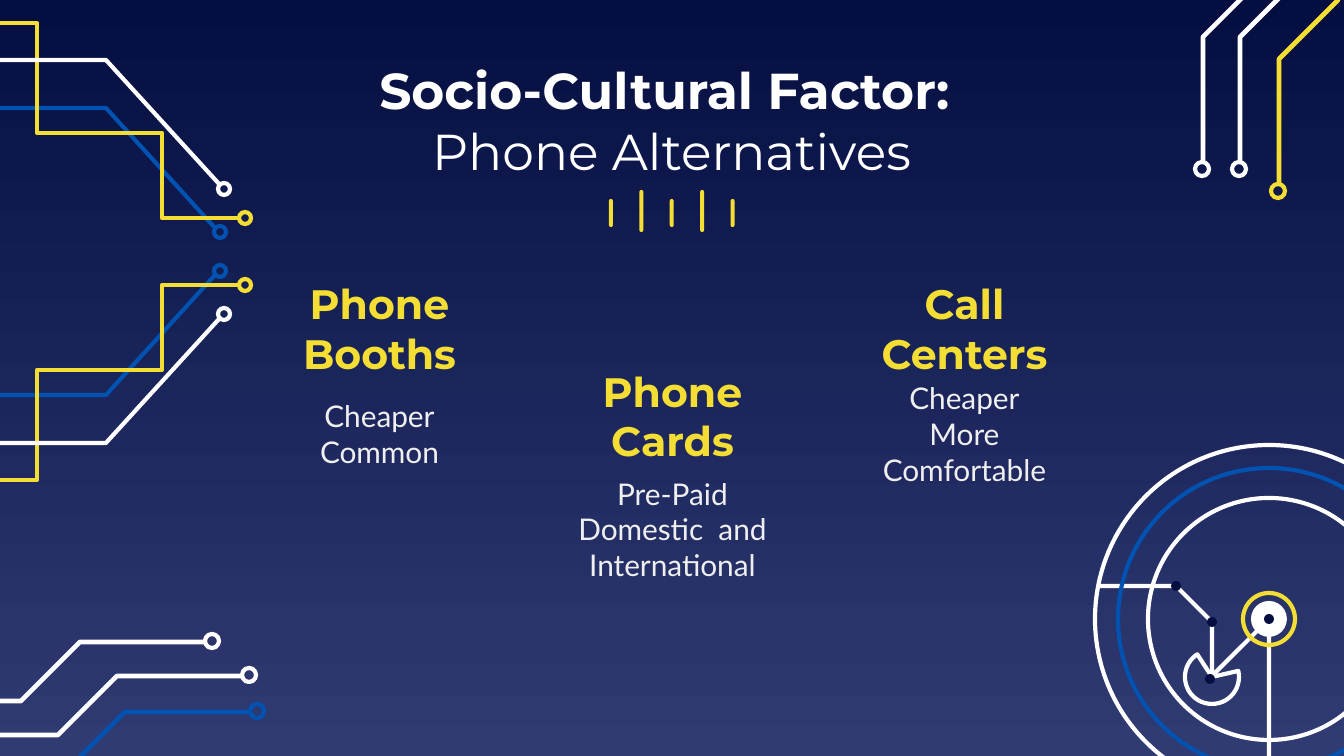
from pptx import Presentation
from pptx import util as u
from pptx.dml import color
from pptx.enum import shapes, text

SCALE = 914400 / 134.4
WHITE, YELLOW, BLUE, NAVY, PALE = "FFFFFF", "F5DE34", "0152B1", "040E41", "EFEFEF"
MIRROR_SUM = 503
BEND = [(-289, 60), (-191, 60), (-132, 1), (-7, 1)]


def px(value):
    return u.Emu(round(value * SCALE))


def rgb(value):
    return color.RGBColor.from_string(value)


def paint(shape, fill=None, line=None, width=2.25):
    shape.shadow.inherit = False
    if fill:
        shape.fill.solid()
        shape.fill.fore_color.rgb = rgb(fill)
    else:
        shape.fill.background()
    if line:
        shape.line.color.rgb = rgb(line)
        shape.line.width = u.Pt(width)
    else:
        shape.line.fill.background()


def add_wire(page, points, hue, width=2.25):
    builder = page.shapes.build_freeform(*points[0], scale=SCALE)
    builder.add_line_segments(points[1:], close=False)
    paint(builder.convert_to_shape(), line=hue, width=width)


def add_preset(page, kind, left, top, width, height, fill=None, line=None):
    shape = page.shapes.add_shape(kind, px(left), px(top), px(width), px(height))
    paint(shape, fill, line)
    return shape


def add_circle(page, center, radius, fill=None, line=None):
    x, y = center
    side = 2 * radius
    add_preset(page, shapes.MSO_SHAPE.OVAL, x - radius, y - radius, side, side, fill, line)


def add_bent_lead(page, ring, hue, upright=False):
    steps = [(dy, dx) for dx, dy in BEND] if upright else BEND
    add_wire(page, [(ring[0] + dx, ring[1] + dy) for dx, dy in steps], hue, 2.5)
    add_circle(page, ring, 7, line=hue)


def add_left_leads(page):
    leads = [
        (BLUE, (220, 232), [(215, 228), (106, 108), (-67, 108)]),
        (YELLOW, (245, 218), [(239, 218), (162, 218), (162, 133), (37, 133), (37, 23), (-67, 23)]),
        (WHITE, (224, 189), [(220, 185), (106, 60), (-67, 60)]),
    ]
    for mirrored in (False, True):
        for hue, ring, points in leads:
            if mirrored:
                ring, *points = [(x, MIRROR_SUM - y) for x, y in [ring] + points]
            add_wire(page, points, hue)
            add_circle(page, ring, 6, line=hue)


def add_dial(page):
    center = (1269, 619)
    corners = [(1097, 586), (1176, 586), (1212, 622), (1212, 676), center, (1269, 825)]
    add_wire(page, corners, WHITE)
    wedge = add_preset(page, shapes.MSO_SHAPE.PIE, 1185, 650, 54, 54, line=WHITE)
    for index, degrees in enumerate((347, 237)):
        wedge.adjustments[index] = degrees * 0.6
    for radius, hue in ((174, WHITE), (121, WHITE), (151, BLUE)):
        add_circle(page, center, radius, line=hue)
    add_circle(page, center, 18, fill=WHITE)
    add_circle(page, center, 26, line=YELLOW)
    for dot in (center, (1176, 586), (1212, 622), (1210, 679)):
        add_circle(page, dot, 5, fill=NAVY)


def add_ticks(page):
    for index in range(5):
        top, height = (190, 42) if index % 2 else (199, 28)
        left = 609 + index * 30.4
        tick = add_preset(page, shapes.MSO_SHAPE.ROUNDED_RECTANGLE, left, top, 4, height, YELLOW)
        tick.adjustments[0] = 0.5


def write(box, lines, size, face, hue):
    frame = box.text_frame
    frame.word_wrap = True
    frame.auto_size = text.MSO_AUTO_SIZE.NONE
    frame.vertical_anchor = text.MSO_ANCHOR.MIDDLE
    frame.margin_left = frame.margin_right = u.Inches(0.1)
    frame.margin_top = frame.margin_bottom = u.Inches(0.1)
    for index, (words, bold) in enumerate(lines):
        para = frame.add_paragraph() if index else frame.paragraphs[0]
        para.alignment = text.PP_ALIGN.CENTER
        span = para.add_run()
        span.text = words
        span.font.size = u.Pt(size)
        span.font.name = face
        span.font.bold = bold
        span.font.color.rgb = rgb(hue)


def add_title(page):
    title = page.shapes.title
    title.left, title.top, title.width, title.height = map(px, (218, 85, 907, 70))
    lines = [("Socio-Cultural Factor: ", True), ("Phone Alternatives", False)]
    write(title, lines, 27, "Montserrat", WHITE)


def add_alternative(page, left, top, heading, detail_top, detail_height, details):
    box = page.shapes.add_textbox(px(left), px(top), px(257), px(60))
    write(box, [(heading, True)], 22, "Montserrat", YELLOW)
    box = page.shapes.add_textbox(px(left), px(detail_top), px(257), px(detail_height))
    write(box, [(detail, False) for detail in details], 16, "Lato", PALE)


def set_background(page):
    fill = page.background.fill
    fill.gradient()
    fill.gradient_angle = 270
    for stop, hue, position in zip(fill.gradient_stops, (NAVY, "303B72"), (0, 1)):
        stop.color.rgb = rgb(hue)
        stop.position = position


def main():
    deck = Presentation()
    deck.slide_width, deck.slide_height = px(1344), px(756)
    page = deck.slides.add_slide(deck.slide_layouts[5])
    set_background(page)
    for ring, hue in (((1202, 169), WHITE), ((1239, 169), WHITE), ((1278, 191), YELLOW)):
        add_bent_lead(page, ring, hue, upright=True)
    for ring, hue in (((249, 675), WHITE), ((257, 711), BLUE), ((212, 641), WHITE)):
        add_bent_lead(page, ring, hue)
    add_title(page)
    add_ticks(page)
    add_alternative(page, 251, 298, "Phone Booths", 386, 95, ["Cheaper", "Common"])
    add_alternative(page, 544, 386, "Phone Cards", 472, 114,
                    ["Pre-Paid", "Domestic  and International"])
    add_alternative(page, 836, 298, "Call Centers", 386, 95, ["Cheaper", "More Comfortable"])
    add_left_leads(page)
    add_dial(page)
    deck.save("out.pptx")


if __name__ == "__main__":
    main()
